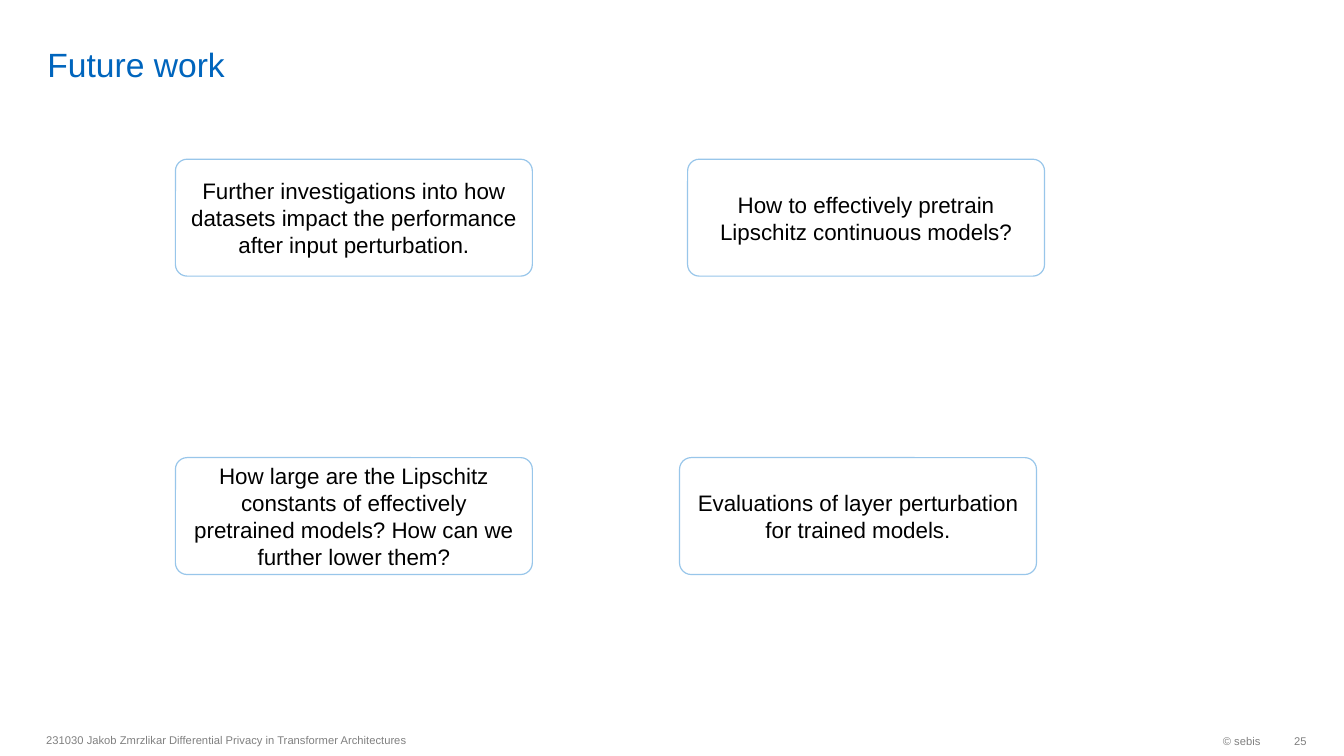
from pptx import Presentation
from pptx.dml.color import RGBColor
from pptx.enum.shapes import MSO_SHAPE
from pptx.enum.text import MSO_ANCHOR, PP_ALIGN
from pptx.util import Inches, Pt

COLORS = {
    "title": "0065BD",
    "foot": "808080",
    "edge": "98C6EA",
    "fill": "FFFFFF",
    "text": "000000",
}

# Left, top and wording of each card
CARDS = [
    (1.74, 1.58, "Further investigations into how datasets impact "
                 "the performance after input perturbation."),
    (6.82, 1.58, "How to effectively pretrain Lipschitz continuous models?"),
    (1.74, 4.54, "How large are the Lipschitz constants of effectively "
                 "pretrained models? How can we further lower them?"),
    (6.74, 4.54, "Evaluations of layer perturbation for trained models."),
]

# Left, top, width, right inset, alignment and wording of each footer part
FOOTS = [
    (0.36, 7.18, 6.3, 0.1, PP_ALIGN.LEFT,
     "231030 Jakob Zmrzlikar Differential Privacy in Transformer Architectures"),
    (10.26, 7.19, 2.34, 0.1, PP_ALIGN.RIGHT, "© sebis"),
    (12.6, 7.19, 0.36, 0, PP_ALIGN.RIGHT, "25"),
]


def color(name):
    return RGBColor.from_string(COLORS[name])


def write(shape, text, size, tint, align=PP_ALIGN.LEFT,
          anchor=MSO_ANCHOR.MIDDLE, inset=(0.1, 0.05, 0.1, 0.05)):
    frame = shape.text_frame
    frame.word_wrap = True
    frame.vertical_anchor = anchor
    (frame.margin_left, frame.margin_top,
     frame.margin_right, frame.margin_bottom) = map(Inches, inset)
    para = frame.paragraphs[0]
    para.alignment = align
    run = para.add_run()
    run.text = text
    run.font.name = "Arial"
    run.font.size = Pt(size)
    run.font.color.rgb = color(tint)


def add_title(slide, text):
    title = slide.shapes.title
    title.left, title.top = Inches(0.37), Inches(0.05)
    title.width, title.height = Inches(11.58), Inches(0.79)
    write(title, text, 24, "title", anchor=MSO_ANCHOR.BOTTOM,
          inset=(0.1, 0, 0.1, 0))


def add_card(slide, left, top, text):
    card = slide.shapes.add_shape(
        MSO_SHAPE.ROUNDED_RECTANGLE, Inches(left), Inches(top),
        Inches(3.54), Inches(1.16))
    card.adjustments[0] = 0.1
    card.shadow.inherit = False
    card.fill.solid()
    card.fill.fore_color.rgb = color("fill")
    card.line.color.rgb = color("edge")
    card.line.width = Pt(0.85)
    write(card, text, 16, "text", align=PP_ALIGN.CENTER)


def add_foot(slide, left, top, width, right, align, text):
    box = slide.shapes.add_textbox(
        Inches(left), Inches(top), Inches(width), Inches(0.32))
    write(box, text, 8, "foot", align=align, inset=(0.1, 0.05, right, 0.05))


def main():
    deck = Presentation()
    deck.slide_width, deck.slide_height = Inches(13.33), Inches(7.5)
    slide = deck.slides.add_slide(deck.slide_layouts[5])

    # Title
    add_title(slide, "Future work")

    # Open questions
    for card in CARDS:
        add_card(slide, *card)

    # Footer
    for foot in FOOTS:
        add_foot(slide, *foot)

    deck.save("out.pptx")


if __name__ == "__main__":
    main()
